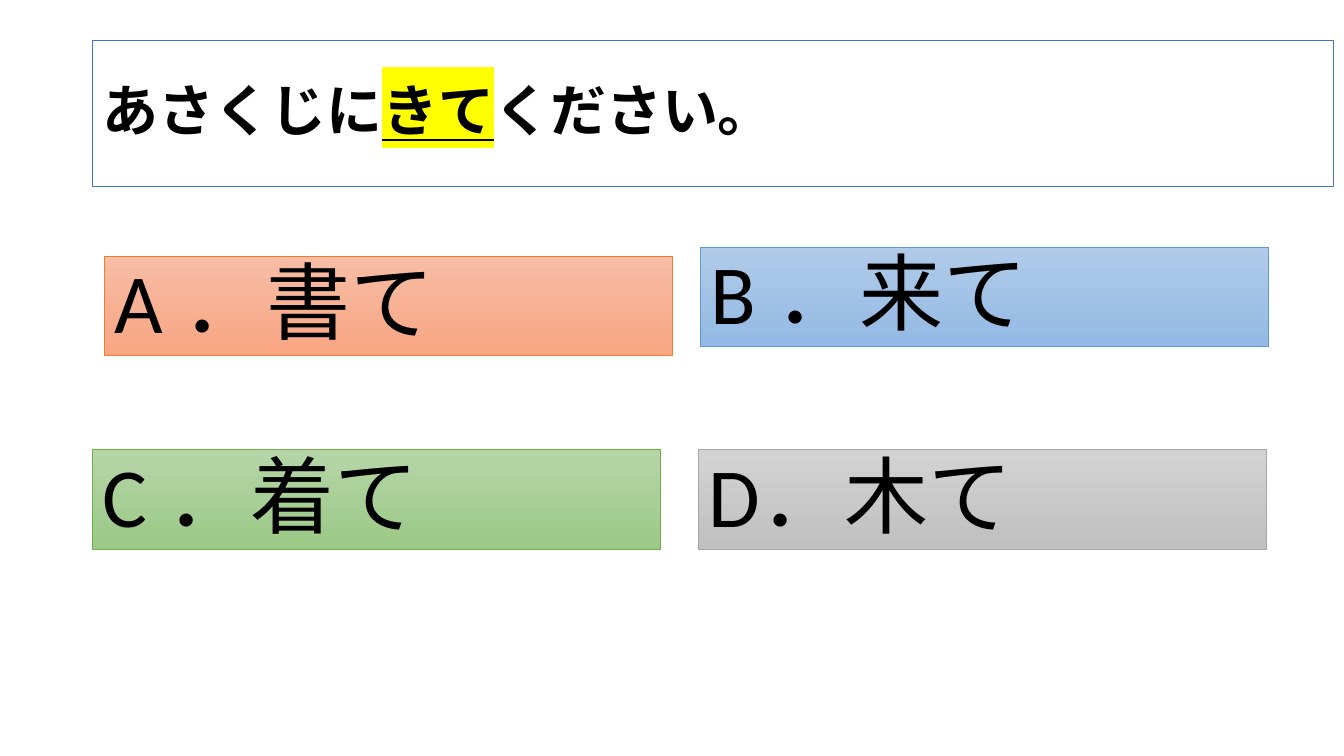
from dataclasses import dataclass

from lxml.etree import Element, SubElement
from pptx import Presentation
from pptx.dml.color import RGBColor
from pptx.enum.shapes import MSO_SHAPE as Shape
from pptx.enum.text import MSO_ANCHOR as Anchor, PP_ALIGN as Align
from pptx.oxml.ns import qn
from pptx.shapes.autoshape import Shape as AutoShape
from pptx.slide import Slide
from pptx.text.text import Font
from pptx.util import Pt

FONT_NAME = "Calibri"
BLACK = RGBColor(0x00, 0x00, 0x00)
WHITE = RGBColor(0xFF, 0xFF, 0xFF)
QUESTION_BORDER = RGBColor(0x44, 0x72, 0xC4)
HIGHLIGHT = RGBColor(0xFF, 0xFF, 0x00)
ORANGE_TOP = RGBColor(0xF7, 0xBD, 0xA5)
ORANGE_BOTTOM = RGBColor(0xF8, 0xA5, 0x82)
ORANGE_BORDER = RGBColor(0xED, 0x7D, 0x31)
BLUE_TOP = RGBColor(0xB1, 0xCB, 0xE9)
BLUE_BOTTOM = RGBColor(0x93, 0xB9, 0xE4)
BLUE_BORDER = RGBColor(0x5B, 0x9B, 0xD5)
GREEN_TOP = RGBColor(0xB5, 0xD5, 0xA7)
GREEN_BOTTOM = RGBColor(0x9C, 0xC9, 0x87)
GREEN_BORDER = RGBColor(0x70, 0xAD, 0x47)
GRAY_TOP = RGBColor(0xD2, 0xD2, 0xD2)
GRAY_BOTTOM = RGBColor(0xC0, 0xC0, 0xC0)
GRAY_BORDER = RGBColor(0xA5, 0xA5, 0xA5)

ANSWER_WIDTH = 405.4
ANSWER_HEIGHT = 71.3


@dataclass(frozen=True)
class Answer:
    text: str
    left: float
    top: float
    gradient: tuple[RGBColor, RGBColor]
    border: RGBColor


ANSWERS = (
    Answer("A ．書て", 74.9, 182.9, (ORANGE_TOP, ORANGE_BOTTOM), ORANGE_BORDER),
    Answer("B ．来て", 500.4, 176.4, (BLUE_TOP, BLUE_BOTTOM), BLUE_BORDER),
    Answer("C ．着て", 66.2, 321.1, (GREEN_TOP, GREEN_BOTTOM), GREEN_BORDER),
    Answer("D．木て", 499, 321.1, (GRAY_TOP, GRAY_BOTTOM), GRAY_BORDER),
)


def add_box(slide: Slide, left: float, top: float, width: float, height: float,
            border: RGBColor, border_width: float, anchor: Anchor) -> AutoShape:
    box = slide.shapes.add_shape(Shape.RECTANGLE, Pt(left), Pt(top), Pt(width), Pt(height))
    box.shadow.inherit = False
    box.line.color.rgb = border
    box.line.width = Pt(border_width)
    frame = box.text_frame
    frame.word_wrap = True
    frame.vertical_anchor = anchor
    frame.paragraphs[0].alignment = Align.LEFT
    frame.paragraphs[0].line_spacing = 0.9
    return box


def style_font(font: Font, size: float, bold: bool = False) -> None:
    font.name = FONT_NAME
    font.size = Pt(size)
    font.bold = bold
    font.color.rgb = BLACK


def add_question(slide: Slide, before: str, target: str, after: str) -> None:
    question = add_box(slide, 66.2, 28.8, 886.3, 104.4, QUESTION_BORDER, 1, Anchor.MIDDLE)
    question.fill.solid()
    question.fill.fore_color.rgb = WHITE
    sentence = question.text_frame.paragraphs[0]
    for part in (before, target, after):
        run = sentence.add_run()
        run.text = part
        style_font(run.font, 40, bold=True)
    target_run = sentence.runs[1]
    target_run.font.underline = True
    highlight = Element(qn("a:highlight"))
    SubElement(highlight, qn("a:srgbClr"), val=str(HIGHLIGHT))
    target_run.font._element.find(qn("a:solidFill")).addnext(highlight)


def add_answer(slide: Slide, answer: Answer) -> None:
    box = add_box(slide, answer.left, answer.top, ANSWER_WIDTH, ANSWER_HEIGHT,
                  answer.border, 0.5, Anchor.TOP)
    box.fill.gradient()
    box.fill.gradient_angle = 270
    for stop, color in zip(box.fill.gradient_stops, answer.gradient):
        stop.color.rgb = color
    choice = box.text_frame.paragraphs[0]
    choice.text = answer.text
    choice.space_before = Pt(10)
    style_font(choice.runs[0].font, 60)


def main() -> None:
    presentation = Presentation()
    presentation.slide_width = Pt(960)
    presentation.slide_height = Pt(540)
    slide = presentation.slides.add_slide(presentation.slide_layouts[6])
    add_question(slide, "あさくじに", "きて", "ください。")
    for answer in ANSWERS:
        add_answer(slide, answer)
    presentation.save("out.pptx")


if __name__ == "__main__":
    main()
